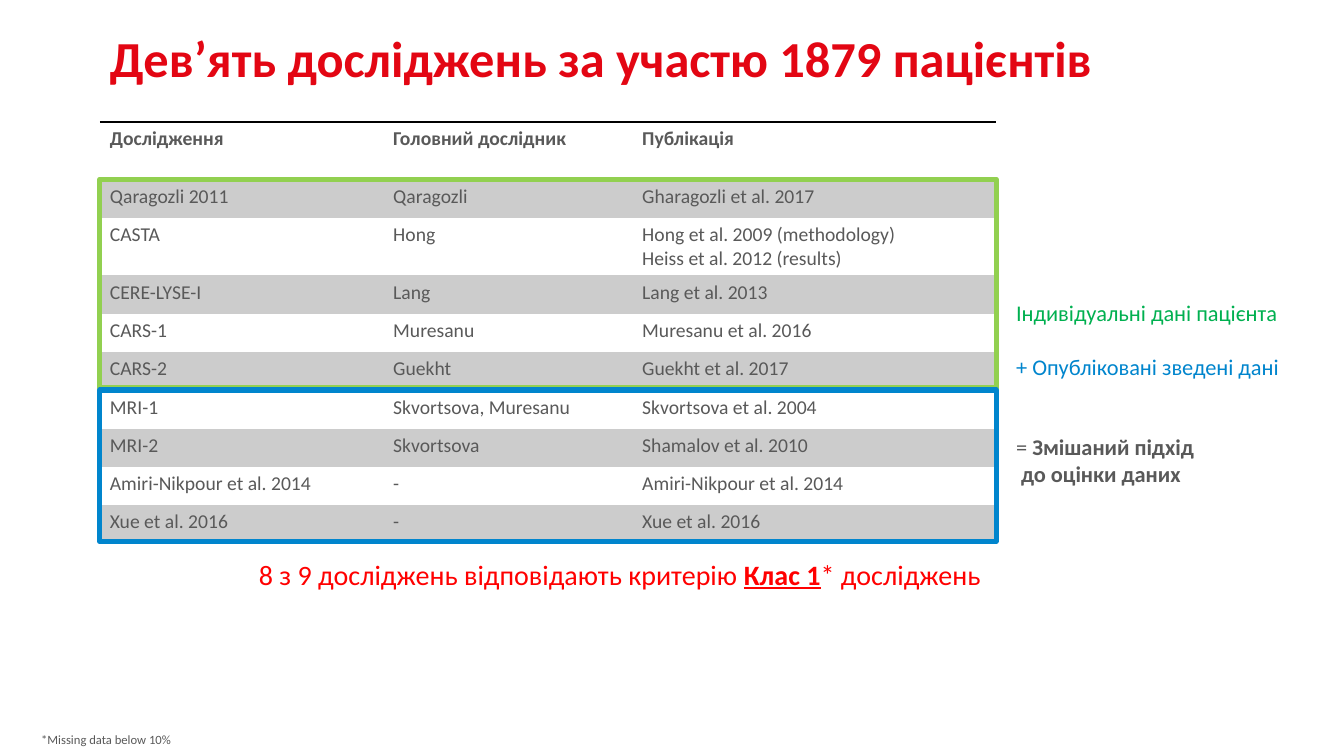
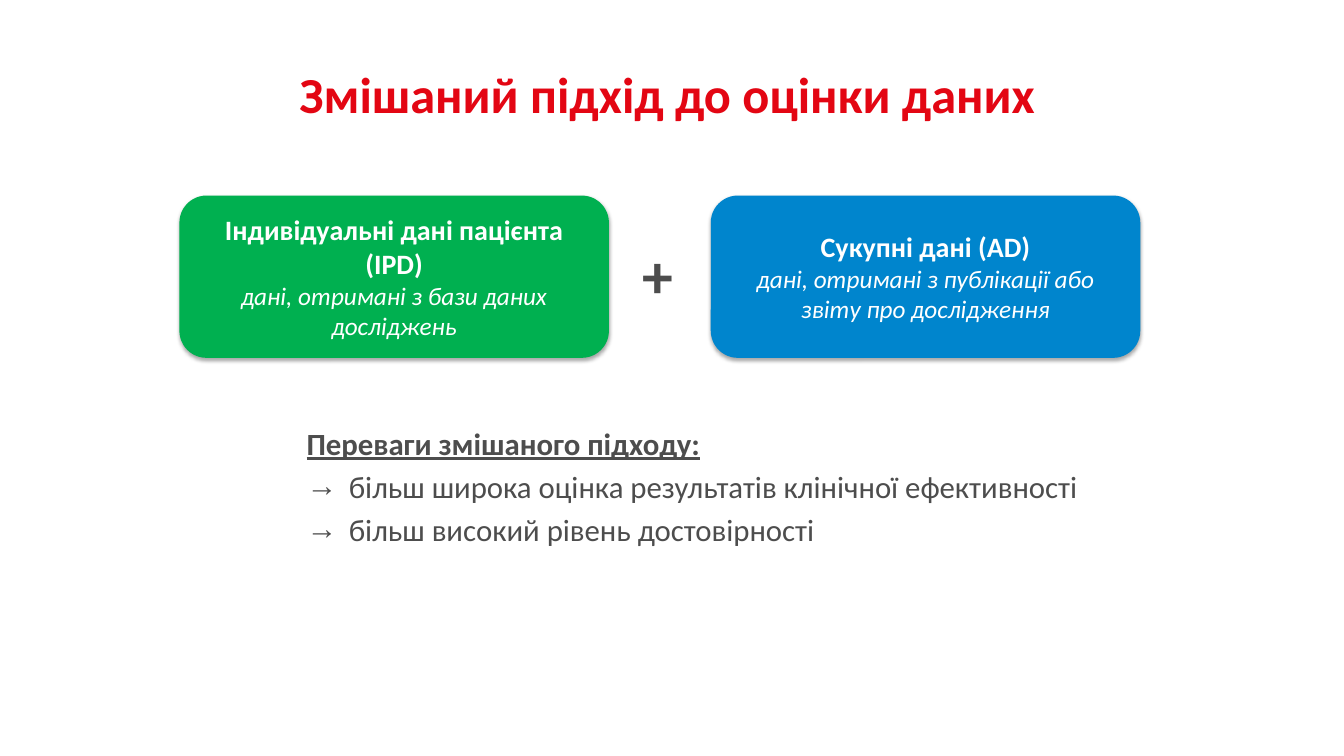
from lxml.etree import SubElement
from pptx import Presentation
from pptx.dml.color import RGBColor
from pptx.enum.shapes import MSO_SHAPE
from pptx.enum.text import MSO_ANCHOR, MSO_AUTO_SIZE, PP_ALIGN
from pptx.oxml.ns import qn
from pptx.util import Inches, Pt

# Shared style
FONT = "Calibri"
RED, GREEN, BLUE = "E30613", "00B050", "0085CD"
GREY, DARK, WHITE, BLACK = "595959", "4D4D4D", "FFFFFF", "000000"
STRIPE, LIME, BRIGHT_RED = "CCCCCC", "92D050", "FF0000"
NO_GRID_STYLE = "{2D5ABB26-0587-4C30-8999-92F81FD0307C}"

# Content of slide 1
STUDIES_TITLE = "Дев’ять досліджень за участю 1879 пацієнтів"
HEADER = ("Дослідження", "Головний дослідник", "Публікація")
INDIVIDUAL_STUDIES = [
    ("Qaragozli 2011", "Qaragozli", "Gharagozli et al. 2017"),
    ("CASTA", "Hong", "Hong et al. 2009 (methodology)\nHeiss et al. 2012 (results)"),
    ("CERE-LYSE-I", "Lang", "Lang et al. 2013"),
    ("CARS-1", "Muresanu", "Muresanu et al. 2016"),
    ("CARS-2", "Guekht", "Guekht et al. 2017"),
]
AGGREGATE_STUDIES = [
    ("MRI-1", "Skvortsova, Muresanu", "Skvortsova et al. 2004"),
    ("MRI-2", "Skvortsova", "Shamalov et al. 2010"),
    ("Amiri-Nikpour et al. 2014", "-", "Amiri-Nikpour et al. 2014"),
    ("Xue et al. 2016", "-", "Xue et al. 2016"),
]
# Runs are (text, bold, underline); legend lines are (runs, colour, space before, indent)
LEGEND = [
    ([("Індивідуальні дані пацієнта", False, False)], GREEN, 0, 0),
    ([("+ Опубліковані зведені дані", False, False)], BLUE, 19, 0),
    ([("= ", False, False), ("Змішаний підхід", True, False)], GREY, 38, 0),
    ([("до оцінки даних", True, False)], GREY, 0, 0.05),
]
CLAIM = [("8 з 9 досліджень відповідають критерію ", False, False),
         ("Клас 1", True, True), ("* досліджень", False, False)]
FOOTNOTE = "*Missing data below 10%"

# Content of slide 2
APPROACH_TITLE = "Змішаний підхід до оцінки даних"
DATA_SOURCES = [
    ("Індивідуальні дані пацієнта (IPD)", "дані, отримані з бази даних досліджень", GREEN),
    ("Сукупні дані (AD)", "дані, отримані з публікації або звіту про дослідження", BLUE),
]
BENEFITS_HEADING = "Переваги змішаного підходу:"
BENEFITS = ["більш широка оцінка результатів клінічної ефективності",
            "більш високий рівень достовірності"]

# Table geometry in inches
TABLE_LEFT, TABLE_TOP = 0.99, 1.21
COLUMN_WIDTHS = (2.81, 2.47, 3.61)
ROW_HEIGHT, TALL_ROW = 0.38, 0.57


def color(hex_code):
    return RGBColor.from_string(hex_code)


def box(left, top, width, height):
    return [Inches(value) for value in (left, top, width, height)]


def style(paragraph, size, hex_code, bold=False, italic=False, underline=False):
    font = paragraph.font
    font.name, font.size, font.color.rgb = FONT, Pt(size), color(hex_code)
    font.bold, font.italic, font.underline = bold, italic, underline


def add_runs(paragraph, runs, size, hex_code):
    style(paragraph, size, hex_code)
    for text, bold, underline in runs:
        run = paragraph.add_run()
        run.text = text
        if bold:
            run.font.bold = True
        if underline:
            run.font.underline = True


def place(shape, left, top, width, height):
    shape.left, shape.top, shape.width, shape.height = box(left, top, width, height)


def set_title(slide, text, area, align):
    title = slide.shapes.title
    place(title, *area)
    title.text_frame.text = text
    title.text_frame.auto_size = MSO_AUTO_SIZE.NONE
    title.text_frame.vertical_anchor = MSO_ANCHOR.MIDDLE
    paragraph = title.text_frame.paragraphs[0]
    paragraph.alignment = align
    style(paragraph, 36, RED, bold=True)


def add_text(slide, area, wrap=True):
    frame = slide.shapes.add_textbox(*box(*area)).text_frame
    frame.word_wrap = wrap
    return frame


def set_indent(paragraph, margin, hanging=0, bullet=None):
    properties = paragraph._p.get_or_add_pPr()
    properties.set("marL", str(Inches(margin)))
    properties.set("indent", str(-Inches(hanging)))
    if bullet:
        SubElement(properties, qn("a:buChar")).set("char", bullet)
    else:
        SubElement(properties, qn("a:buNone"))


def add_border(cell, edge):
    line = SubElement(cell._tc.get_or_add_tcPr(), qn(f"a:{edge}"), w=str(Pt(1)))
    fill = SubElement(line, qn("a:solidFill"))
    SubElement(fill, qn("a:srgbClr"), val=BLACK)


def add_soft_shadow(shape):
    shape.shadow.inherit = False
    effects = shape._element.spPr.find(qn("a:effectLst"))
    shadow = SubElement(effects, qn("a:outerShdw"), blurRad=str(Pt(3.1)),
                        dist=str(Pt(1.8)), dir="5400000", rotWithShape="0")
    shade = SubElement(shadow, qn("a:srgbClr"), val=BLACK)
    SubElement(shade, qn("a:alpha"), val="35000")


def row_height(row):
    return TALL_ROW if row is HEADER or any("\n" in text for text in row) else ROW_HEIGHT


def add_study_table(slide):
    rows = [HEADER, *INDIVIDUAL_STUDIES, *AGGREGATE_STUDIES]
    heights = [row_height(row) for row in rows]
    area = box(TABLE_LEFT, TABLE_TOP, sum(COLUMN_WIDTHS), sum(heights))
    table = slide.shapes.add_table(len(rows), len(HEADER), *area).table
    table._tbl.tblPr.find(qn("a:tableStyleId")).text = NO_GRID_STYLE
    table.horz_banding = False
    for column, width in zip(table.columns, COLUMN_WIDTHS):
        column.width = Inches(width)
    for index, (row, height) in enumerate(zip(rows, heights)):
        table.rows[index].height = Inches(height)
        for cell, text in zip(table.rows[index].cells, row):
            cell.text = text
            for paragraph in cell.text_frame.paragraphs:
                style(paragraph, 14, GREY, bold=row is HEADER)
            if row is HEADER:
                add_border(cell, "lnT")
            if row is HEADER or row is rows[-1]:
                add_border(cell, "lnB")
            if index % 2:
                cell.fill.solid()
                cell.fill.fore_color.rgb = color(STRIPE)
            else:
                cell.fill.background()


def add_group_frames(slide):
    top = TABLE_TOP + TALL_ROW
    for studies, hex_code in ((INDIVIDUAL_STUDIES, LIME), (AGGREGATE_STUDIES, BLUE)):
        height = sum(row_height(row) for row in studies)
        area = box(TABLE_LEFT, top, sum(COLUMN_WIDTHS), height - 0.02)
        frame = slide.shapes.add_shape(MSO_SHAPE.RECTANGLE, *area)
        frame.shadow.inherit = False
        frame.fill.background()
        frame.line.color.rgb = color(hex_code)
        frame.line.width = Pt(3.75)
        top += height


def build_studies(deck):
    slide = deck.slides.add_slide(deck.slide_layouts[5])
    set_title(slide, STUDIES_TITLE, (0.99, -0.06, 11.86, 1.25), PP_ALIGN.LEFT)
    add_study_table(slide)
    add_group_frames(slide)

    # Legend beside the table
    legend = add_text(slide, (9.98, 2.92, 3.26, 1.99))
    for index, (runs, hex_code, space, indent) in enumerate(LEGEND):
        paragraph = legend.add_paragraph() if index else legend.paragraphs[0]
        set_indent(paragraph, indent)
        paragraph.space_before = Pt(space)
        add_runs(paragraph, runs, 16, hex_code)

    # Claim and footnote
    claim = add_text(slide, (2.47, 5.48, 7.41, 0.44), wrap=False)
    add_runs(claim.paragraphs[0], CLAIM, 20, BRIGHT_RED)
    footnote = add_text(slide, (0.31, 7.21, 5.19, 0.25))
    footnote.text = FOOTNOTE
    style(footnote.paragraphs[0], 9, GREY)


def build_approach(deck):
    slide = deck.slides.add_slide(deck.slide_layouts[1])
    set_title(slide, APPROACH_TITLE, (2.25, 0.3, 8.74, 1.25), PP_ALIGN.CENTER)

    # Benefits list
    benefits = slide.placeholders[1]
    place(benefits, 2.94, 4.16, 9.32, 1.37)
    frame = benefits.text_frame
    frame.text = "\n".join([BENEFITS_HEADING, *BENEFITS])
    frame.auto_size = MSO_AUTO_SIZE.NONE
    heading, *points = frame.paragraphs
    set_indent(heading, 0)
    heading.space_before = Pt(0)
    style(heading, 22, DARK, bold=True, underline=True)
    for point in points:
        set_indent(point, 0.42, hanging=0.42, bullet="→")
        point.space_before = Pt(4.4)
        style(point, 22, DARK)

    # Data source cards
    for index, (name, description, hex_code) in enumerate(DATA_SOURCES):
        area = box(1.78 + index * 5.27, 1.94, 4.26, 1.61)
        card = slide.shapes.add_shape(MSO_SHAPE.ROUNDED_RECTANGLE, *area)
        card.fill.solid()
        card.fill.fore_color.rgb = color(hex_code)
        card.line.fill.background()
        add_soft_shadow(card)
        card_text = card.text_frame
        card_text.margin_left = card_text.margin_right = Inches(0.15)
        card_text.vertical_anchor = MSO_ANCHOR.MIDDLE
        card_text.text = f"{name}\n{description}"
        label, detail = card_text.paragraphs
        label.alignment = detail.alignment = PP_ALIGN.CENTER
        style(label, 20, WHITE, bold=True)
        style(detail, 18, WHITE, italic=True)

    # Plus sign between the cards
    plus = add_text(slide, (6.27, 2.3, 0.5, 0.84), wrap=False)
    plus.text = "+"
    style(plus.paragraphs[0], 44, DARK, bold=True)


def main():
    deck = Presentation()
    deck.slide_width, deck.slide_height = Inches(13.33), Inches(7.5)
    build_studies(deck)
    build_approach(deck)
    deck.save("out.pptx")


if __name__ == "__main__":
    main()
